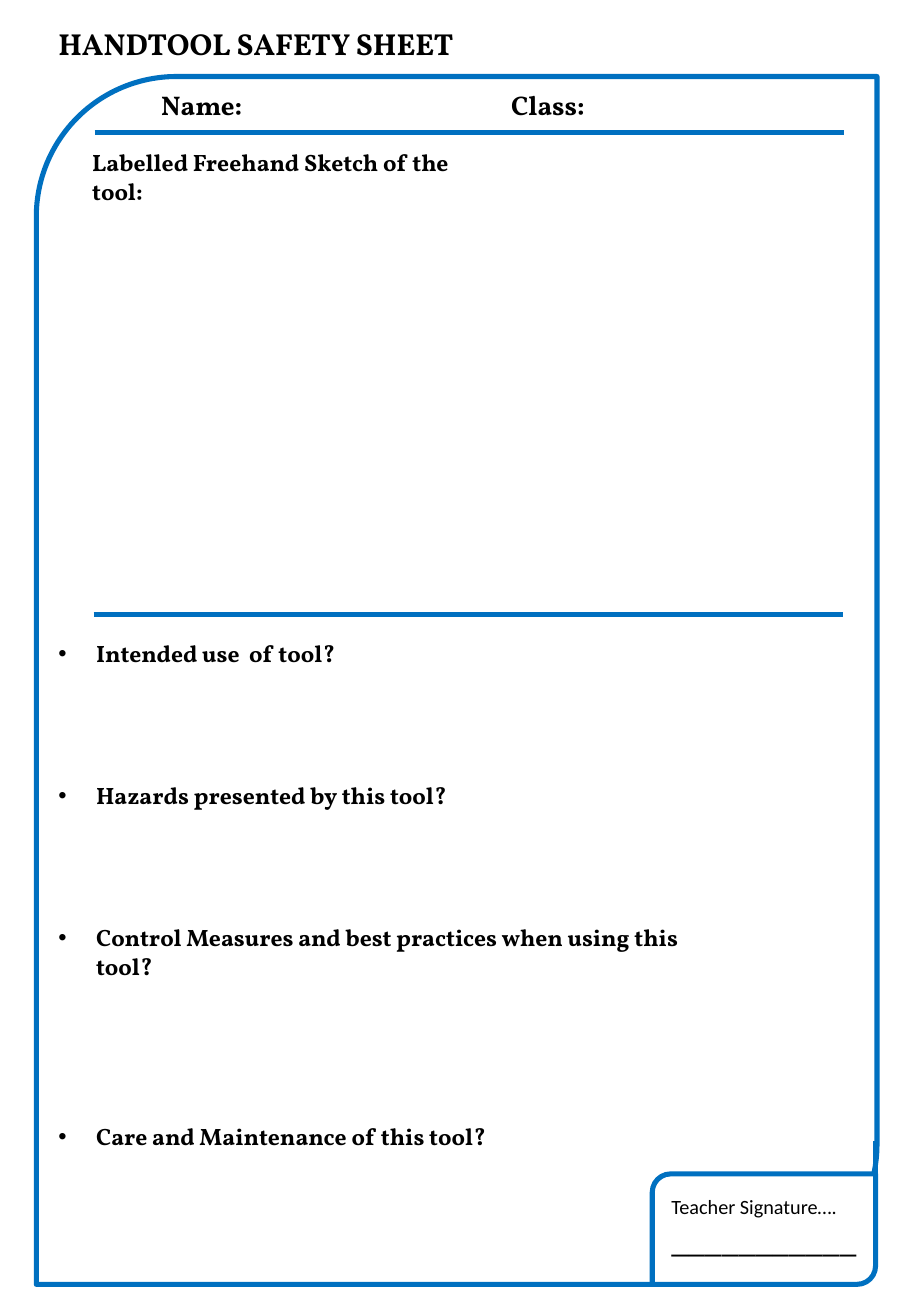
from dataclasses import dataclass

from lxml.etree import SubElement
from pptx import Presentation
from pptx.dml.color import RGBColor
from pptx.enum.shapes import MSO_CONNECTOR, MSO_SHAPE
from pptx.oxml.ns import qn
from pptx.slide import Slide
from pptx.util import Cm, Pt


@dataclass(frozen=True)
class Theme:
    ink: RGBColor = RGBColor(0x00, 0x00, 0x00)
    border: RGBColor = RGBColor(0x00, 0x70, 0xC0)
    paper: RGBColor = RGBColor(0xFF, 0xFF, 0xFF)
    heading_font: str = "Vollkorn"
    body_font: str = "Calibri"
    title_size: float = 18
    field_size: float = 16
    question_size: float = 14
    note_size: float = 12
    signature_size: float = 20
    line_width: float = 3
    answer_line: float = 16.83


THEME = Theme()


@dataclass(frozen=True)
class Area:
    left: float
    top: float
    width: float
    height: float

    def lengths(self) -> tuple[Cm, Cm, Cm, Cm]:
        return Cm(self.left), Cm(self.top), Cm(self.width), Cm(self.height)


@dataclass(frozen=True)
class Line:
    """One paragraph, with room for answer_lines empty lines above it."""
    text: str
    size: float
    font: str = THEME.heading_font
    bold: bool = True
    bullet: bool = False
    tab: float = 0
    answer_lines: int = 0


@dataclass(frozen=True)
class TextBlock:
    area: Area
    lines: tuple[Line, ...]


@dataclass(frozen=True)
class Panel:
    area: Area
    filled: bool


@dataclass(frozen=True)
class Rule:
    start: tuple[float, float]
    end: tuple[float, float]


def question(text: str, answer_lines: int = 0) -> Line:
    return Line(text, THEME.question_size, bullet=True, answer_lines=answer_lines)


PANELS = (
    Panel(Area(0.76, 1.6, 17.58, 25.25), filled=False),
    Panel(Area(13.64, 24.54, 4.67, 2.31), filled=True),
)
RULES = (
    Rule((1.96, 12.85), (17.63, 12.85)),
    Rule((1.98, 2.77), (17.65, 2.77)),
    Rule((18.31, 23.85), (18.31, 25.07)),
)
TEXT_BLOCKS = (
    TextBlock(Area(0.97, 0.41, 14.61, 1.02),
              (Line("HANDTOOL SAFETY SHEET", THEME.title_size),)),
    TextBlock(Area(3.12, 1.73, 15.93, 0.94),
              (Line("Name:\tClass:", THEME.field_size, tab=7.32),)),
    TextBlock(Area(1.68, 2.97, 8.99, 0.86),
              (Line("Labelled Freehand Sketch of the tool:", THEME.question_size),)),
    TextBlock(Area(0.97, 13.24, 14.43, 10.43), (
        question("Intended use  of tool?"),
        question("Hazards presented by this tool?", 4),
        question("Control Measures and best practices when using this tool?", 4),
        question("Care and Maintenance of this tool?", 5),
    )),
    TextBlock(Area(13.79, 24.84, 4.39, 1.63), (
        Line("Teacher Signature….", THEME.note_size, THEME.body_font, bold=False),
        Line("___________", THEME.signature_size, THEME.body_font, bold=False),
    )),
)


def draw_panel(page: Slide, panel: Panel) -> None:
    shape = page.shapes.add_shape(MSO_SHAPE.ROUND_2_DIAG_RECTANGLE, *panel.area.lengths())
    shape.shadow.inherit = False
    if panel.filled:
        shape.fill.solid()
        shape.fill.fore_color.rgb = THEME.paper
    else:
        shape.fill.background()
    shape.line.color.rgb = THEME.border
    shape.line.width = Pt(THEME.line_width)


def draw_rule(page: Slide, rule: Rule) -> None:
    ends = [Cm(value) for value in (*rule.start, *rule.end)]
    connector = page.shapes.add_connector(MSO_CONNECTOR.STRAIGHT, *ends)
    connector.line.color.rgb = THEME.border
    connector.line.width = Pt(THEME.line_width)
    SubElement(connector._element.spPr, qn("a:effectLst"))


def draw_text(page: Slide, block: TextBlock) -> None:
    box = page.shapes.add_textbox(*block.area.lengths())
    frame = box.text_frame
    frame.word_wrap = True
    for index, line in enumerate(block.lines):
        para = frame.add_paragraph() if index else frame.paragraphs[0]
        para.text = line.text
        properties = para._p.get_or_add_pPr()
        if line.bullet:
            properties.set("marL", str(Cm(0.79)))
            properties.set("indent", str(-Cm(0.79)))
            SubElement(properties, qn("a:buFont"), typeface="Arial")
            SubElement(properties, qn("a:buChar"), char="•")
        if line.tab:
            tabs = SubElement(properties, qn("a:tabLst"))
            SubElement(tabs, qn("a:tab"), pos=str(Cm(line.tab)), algn="l")
        if line.answer_lines:
            para.space_before = Pt(line.answer_lines * THEME.answer_line)
        para.font.name = line.font
        para.font.size = Pt(line.size)
        para.font.bold = line.bold
        para.font.color.rgb = THEME.ink


def main() -> None:
    deck = Presentation()
    deck.slide_width, deck.slide_height = Cm(19.05), Cm(27.51)
    page = deck.slides.add_slide(deck.slide_layouts[6])
    for panel in PANELS:
        draw_panel(page, panel)
    for rule in RULES:
        draw_rule(page, rule)
    for block in TEXT_BLOCKS:
        draw_text(page, block)
    deck.save("out.pptx")


if __name__ == "__main__":
    main()
